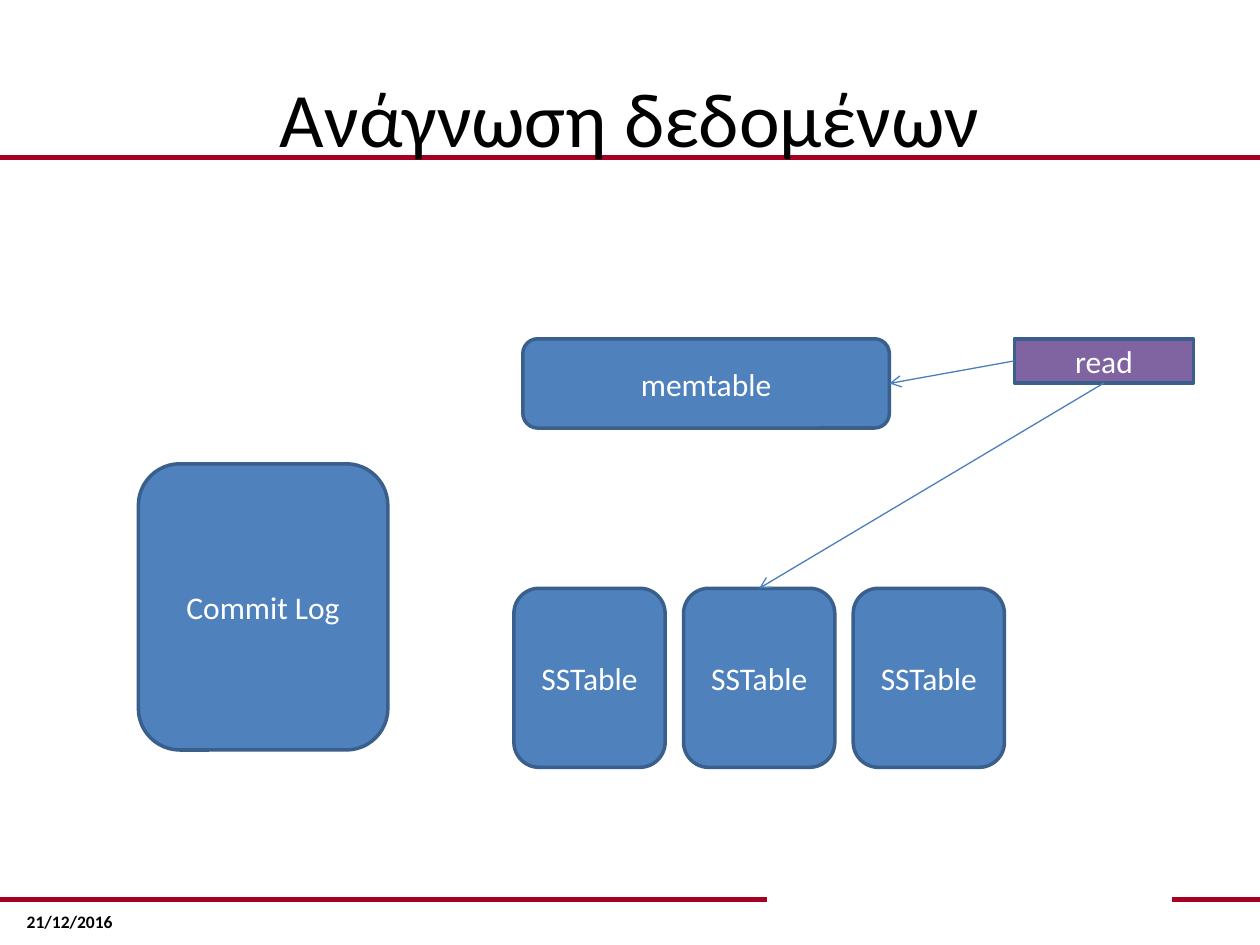
from pptx import Presentation
from pptx.dml.color import RGBColor
from pptx.enum.shapes import MSO_CONNECTOR as Link, MSO_SHAPE as Shape
from pptx.enum.text import MSO_ANCHOR as Anchor, PP_ALIGN as Align
from pptx.oxml.ns import qn
from pptx.util import Cm, Pt
from lxml.etree import SubElement

BLACK = RGBColor(0x00, 0x00, 0x00)
WHITE = RGBColor(0xFF, 0xFF, 0xFF)
RED = RGBColor(0xA5, 0x00, 0x21)
BLUE = RGBColor(0x4F, 0x81, 0xBD)
NAVY = RGBColor(0x3A, 0x5F, 0x8C)
STEEL = RGBColor(0x4B, 0x7E, 0xBC)
PURPLE = RGBColor(0x80, 0x64, 0xA2)

WIDE, HIGH = 25.4, 19.05
TOP, LOW = 3.18, 18.14
INSETS = {"margin_left": Cm(0.24), "margin_right": Cm(0.24),
          "margin_top": Cm(0.12), "margin_bottom": Cm(0.12)}


def style(item, **values):
    for name, value in values.items():
        setattr(item, name, value)


def write(frame, text, size, color, align, bold=False, **form):
    style(frame, word_wrap=True, **INSETS)
    style(frame, **form)
    frame.text = text
    para = frame.paragraphs[0]
    para.alignment = align
    font = para.runs[0].font
    style(font, name="Calibri", size=Pt(size), bold=bold)
    font.color.rgb = color


def add_line(slide, ends, color, width):
    line = slide.shapes.add_connector(Link.STRAIGHT, *map(Cm, ends))
    line.line.color.rgb = color
    line.line.width = Pt(width)
    SubElement(line._element.spPr, qn("a:effectLst"))
    return line


def add_arrow(slide, start, site, end, goal):
    """Join a side of one box to a side of another, with an open head."""
    arrow = add_line(slide, (0, 0, 1, 1), STEEL, 0.75)
    arrow.begin_connect(start, site)
    arrow.end_connect(end, goal)
    SubElement(arrow.line._get_or_add_ln(), qn("a:tailEnd"), type="arrow")


def add_block(slide, box, text, fill=BLUE, kind=Shape.ROUNDED_RECTANGLE):
    block = slide.shapes.add_shape(kind, *map(Cm, box))
    block.shadow.inherit = False
    block.fill.solid()
    block.fill.fore_color.rgb = fill
    block.line.color.rgb = NAVY
    block.line.width = Pt(2)
    write(block.text_frame, text, 18, WHITE, Align.CENTER,
          vertical_anchor=Anchor.MIDDLE)
    return block


def add_frame(slide):
    """Red rules and the date at the foot."""
    date = slide.shapes.add_textbox(Cm(0.3), Cm(18.24), Cm(2.79), Cm(0.81))
    write(date.text_frame, "21/12/2016", 10, BLACK, Align.LEFT, bold=True)
    for left, right, y in ((23.62, WIDE, LOW), (0, 15.47, LOW), (0, WIDE, TOP)):
        add_line(slide, (left, y, right, y), RED, 3)


def add_title(slide, box, text):
    title = slide.shapes.title
    left, top, width, height = map(Cm, box)
    style(title, left=left, top=top, width=width, height=height)
    write(title.text_frame, text, 44, BLACK, Align.CENTER,
          vertical_anchor=Anchor.MIDDLE)
    slide.shapes._spTree.append(title._element)  # in front of the rule


def add_tables(slide, box, count, gap):
    """A row of equal SSTable blocks that fills the box."""
    left, top, width, height = box
    size = (width - gap * (count - 1)) / count
    return [add_block(slide, (left + i * (size + gap), top, size, height),
                      "SSTable") for i in range(count)]


def add_store(slide, box):
    """The read path through memory and the tables on disk."""
    left, top, width, height = box
    tables = add_tables(slide, (left + 7.57, top + 5.03, 9.89, 3.61), 3, 0.37)
    add_block(slide, (left, top + 2.52, 5.03, 5.77), "Commit Log")
    mem = add_block(slide, (left + 7.75, top, 7.39, 1.8), "memtable")
    read = add_block(slide, (left + width - 3.61, top, 3.61, 0.89), "read",
                     PURPLE, Shape.RECTANGLE)
    add_arrow(slide, read, 1, mem, 3)
    add_arrow(slide, read, 2, tables[1], 0)


def main():
    deck = Presentation()
    style(deck, slide_width=Cm(WIDE), slide_height=Cm(HIGH))
    slide = deck.slides.add_slide(deck.slide_layouts[5])
    add_frame(slide)
    add_title(slide, (1.27, 0.76, 22.86, 3.18), "Ανάγνωση δεδομένων")
    add_store(slide, (2.79, 6.83, 21.27, 8.64))
    deck.save("out.pptx")


if __name__ == "__main__":
    main()
